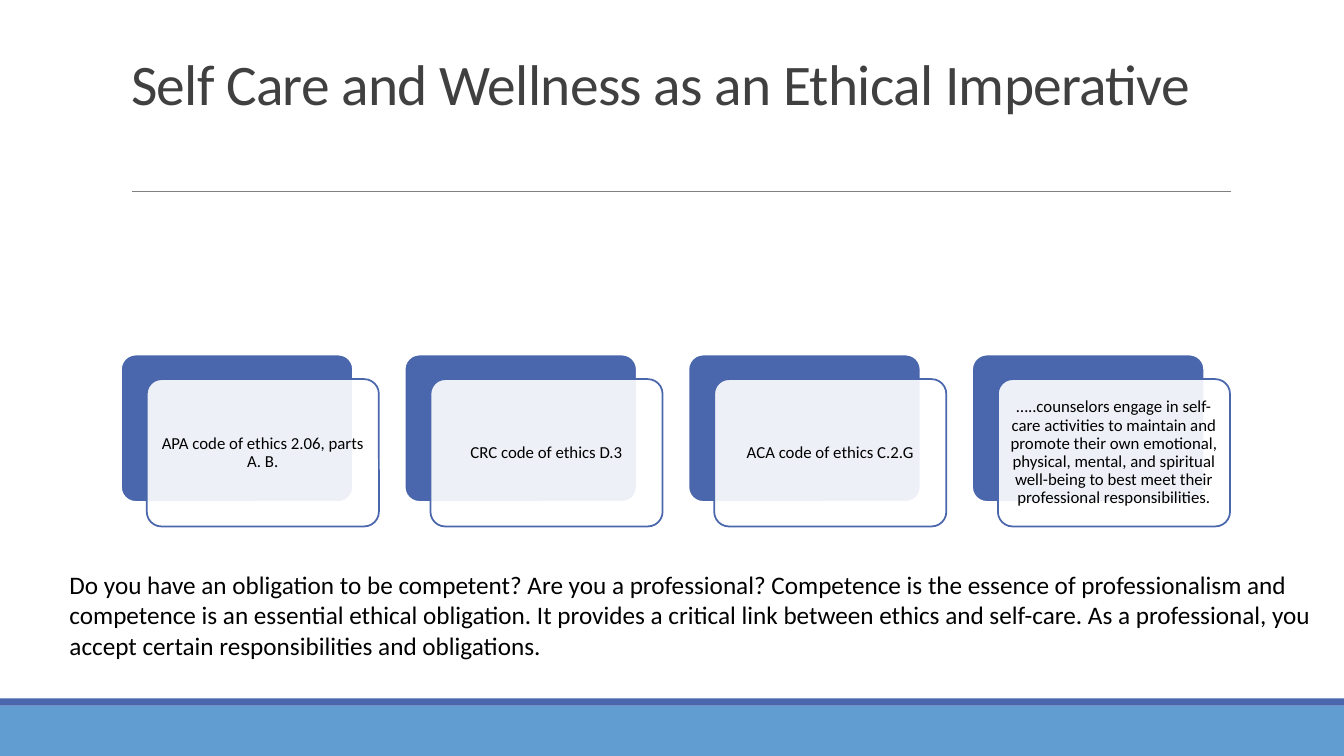
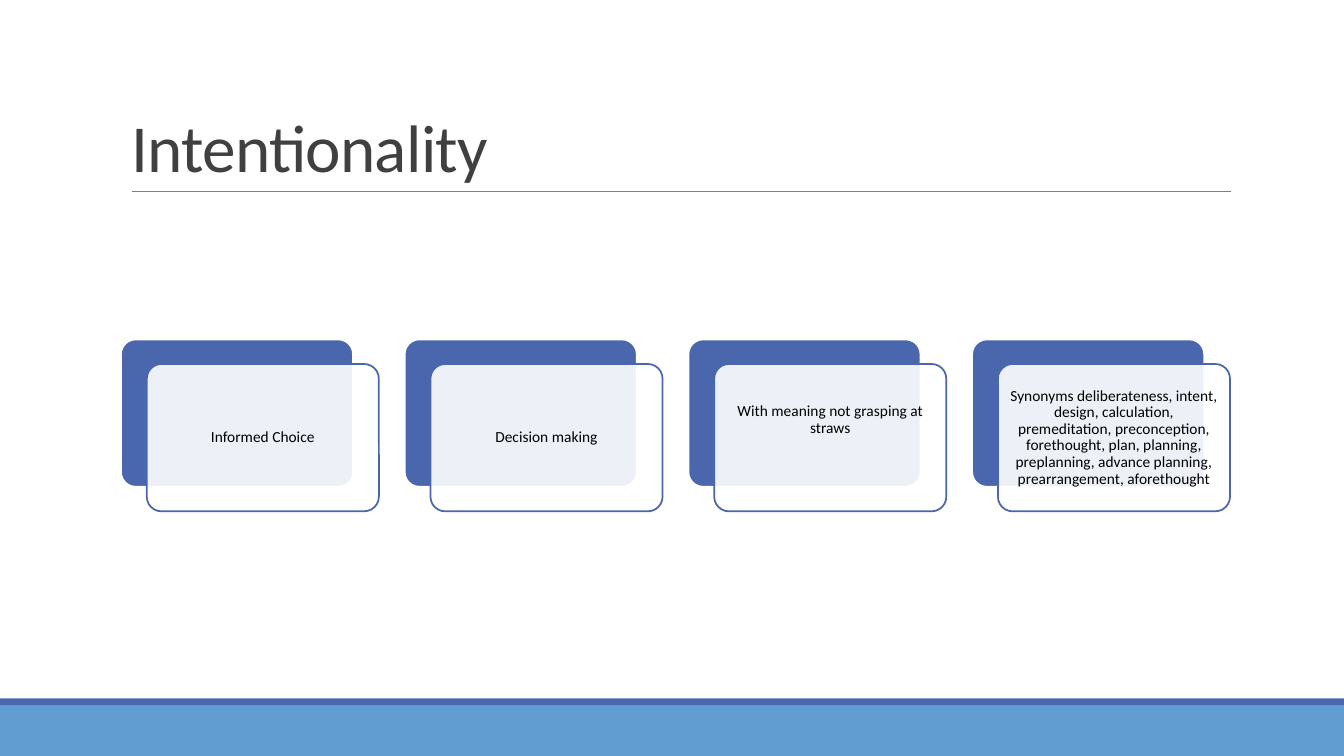
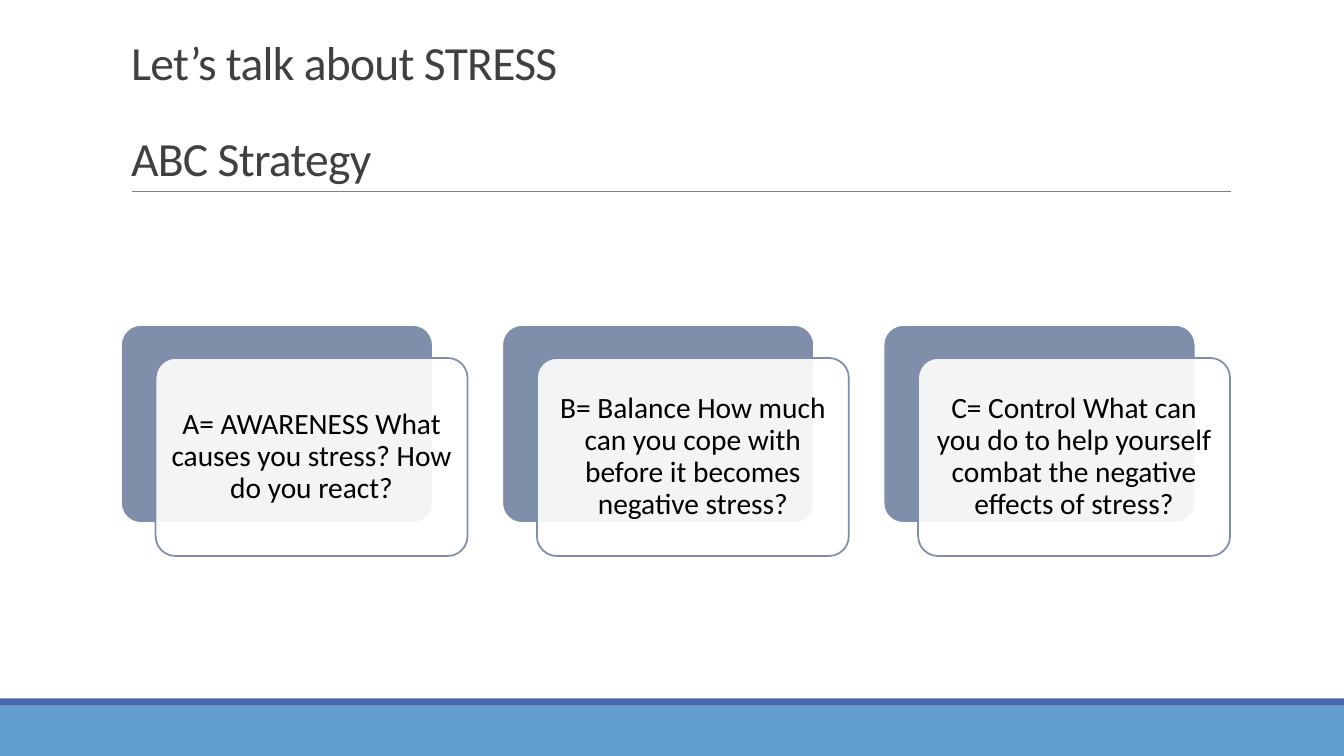
from lxml import etree
from pptx import Presentation
from pptx.dml.color import RGBColor
from pptx.enum import shapes, text
from pptx.oxml.ns import qn
from pptx.util import Inches, Pt

COLORS = {
    "band": "629DD1",
    "blue": "4A66AC",
    "slate": "7F8FA9",
    "rule": "808080",
    "title": "404040",
    "text": "000000",
    "white": "FFFFFF",
}
FONT = "Calibri"
TITLE_BOX = (1.2, 0.31, 11, 1.59)


def rgb(name):
    return RGBColor.from_string(COLORS[name])


def place(shape, box):
    shape.left, shape.top, shape.width, shape.height = map(Inches, box)


def style(para, size, color, spacing, align):
    para.font.name = FONT
    para.font.size = Pt(size)
    para.font.color.rgb = rgb(color)
    para.line_spacing = spacing
    para.alignment = align


def add_block(page, kind, box, fill, line=None, alpha=None):
    """Add a filled preset shape, outlined when a line colour is given."""
    block = page.shapes.add_shape(kind, *map(Inches, box))
    block.shadow.inherit = False
    block.fill.solid()
    block.fill.fore_color.rgb = rgb(fill)
    if alpha is not None:
        color = block.fill._xPr.find(qn("a:solidFill"))[0]
        etree.SubElement(color, qn("a:alpha")).set("val", str(alpha * 1000))
    if line:
        block.line.color.rgb = rgb(line)
        block.line.width = Pt(1.25)
    else:
        block.line.fill.background()
    return block


def add_layout_decor(page):
    """Draw the footer bands and title rule, then hand them to the layout."""
    rect = shapes.MSO_SHAPE.RECTANGLE
    footer = add_block(page, rect, (0, 7, 13.33, 0.5), "band")
    stripe = add_block(page, rect, (0, 6.93, 13.33, 0.07), "blue")
    rule = page.shapes.add_connector(
        shapes.MSO_CONNECTOR.STRAIGHT,
        Inches(1.31), Inches(1.9), Inches(12.21), Inches(1.9))
    rule.line.color.rgb = rgb("rule")
    rule.line.width = Pt(0.5)
    etree.SubElement(rule._element.spPr, qn("a:effectLst"))
    for part in (footer, stripe, rule):
        page.slide_layout.shapes._spTree.append(part._element)


def set_title(page, lines, size, bottom=0.05, gap=0):
    """Fill the title; gap is the space in points between its lines."""
    title = page.shapes.title
    place(title, TITLE_BOX)
    frame = title.text_frame
    frame.text = "\n".join(lines)
    frame.word_wrap = True
    frame.auto_size = text.MSO_AUTO_SIZE.NONE
    frame.vertical_anchor = text.MSO_ANCHOR.BOTTOM
    frame.margin_bottom = Inches(bottom)
    for index, para in enumerate(frame.paragraphs):
        style(para, size, "title", 0.85, text.PP_ALIGN.LEFT)
        para.space_before = Pt(gap if index else 0)
        for span in para.runs:
            span._r.get_or_add_rPr().set("spc", "-50")


def add_cards(page, box, labels, size, color, inset=0.05):
    """Spread layered cards over the box width, centred on its height.

    A label is a text, or a text with the extra inset that raises it.
    """
    left, top, width, height = box
    count = len(labels)
    # Each card spans 10/9 of its back panel, and gaps are 1/9 of it
    card_w = width * 9 / (11 * count - 1)
    card_h = card_w * 0.635
    shift_x, shift_y = card_w / 9, card_h / 6
    y = top + (height - card_h - shift_y) / 2
    rounded = shapes.MSO_SHAPE.ROUNDED_RECTANGLE
    for index, label in enumerate(labels):
        words, lift = label if isinstance(label, tuple) else (label, 0)
        x = left + index * (card_w + 2 * shift_x)
        back = add_block(page, rounded, (x, y, card_w, card_h), color, "white")
        front = add_block(page, rounded,
                          (x + shift_x, y + shift_y, card_w, card_h),
                          "white", color, alpha=90)
        for panel in (back, front):
            panel.adjustments[0] = 0.1
        frame = front.text_frame
        frame.text = words
        frame.word_wrap = True
        frame.vertical_anchor = text.MSO_ANCHOR.MIDDLE
        frame.margin_left = frame.margin_right = Inches(inset)
        frame.margin_top = Inches(inset)
        frame.margin_bottom = Inches(inset + lift)
        style(frame.paragraphs[0], size, "text", 0.9, text.PP_ALIGN.CENTER)


def add_note(page, box, words):
    note = page.shapes.add_textbox(*map(Inches, box))
    note.text_frame.word_wrap = True
    note.text_frame.text = words
    style(note.text_frame.paragraphs[0], 18, "text", 1.0, text.PP_ALIGN.LEFT)


def main():
    deck = Presentation()
    deck.slide_width, deck.slide_height = Inches(13.33), Inches(7.5)
    layout = deck.slide_layouts[5]
    ethics, intent, stress = [deck.slides.add_slide(layout) for _ in range(3)]
    add_layout_decor(ethics)

    # Ethical imperative
    set_title(ethics, ["Self Care and Wellness as an Ethical Imperative"],
              41, bottom=0.74)
    add_cards(ethics, (1.2, 2.37, 11, 4), [
        "APA code of ethics 2.06, parts A. B.",
        "CRC code of ethics D.3",
        "ACA code of ethics C.2.G",
        "…..counselors engage in self-care activities to maintain and promote "
        "their own emotional, physical, mental, and spiritual well-being to "
        "best meet their professional responsibilities.",
    ], 12, "blue")
    add_note(ethics, (0.59, 5.6, 12.55, 1.31),
             "Do you have an obligation to be competent? Are you a "
             "professional? Competence is the essence of professionalism and "
             "competence is an essential ethical obligation. It provides a "
             "critical link between ethics and self-care. As a professional, "
             "you accept certain responsibilities and obligations.")

    # Intentionality
    set_title(intent, ["Intentionality"], 48)
    add_cards(intent, (1.2, 2.22, 11, 4), [
        "Informed Choice",
        "Decision making",
        ("With meaning not grasping at straws", 0.35),
        "Synonyms deliberateness, intent, design, calculation, premeditation, "
        "preconception, forethought, plan, planning, preplanning, advance "
        "planning, prearrangement, aforethought",
    ], 11, "blue")

    # Stress strategy
    set_title(stress, ["Let’s talk about STRESS", "ABC Strategy"], 34, gap=34)
    add_cards(stress, (1.2, 2.37, 11, 4), [
        "A= AWARENESS What causes you stress? How do you react?",
        "B= Balance How much can you cope with before it becomes negative "
        "stress?",
        "C= Control What can you do to help yourself combat the negative "
        "effects of stress?",
    ], 21, "slate", inset=0.09)

    deck.save("out.pptx")


if __name__ == "__main__":
    main()
